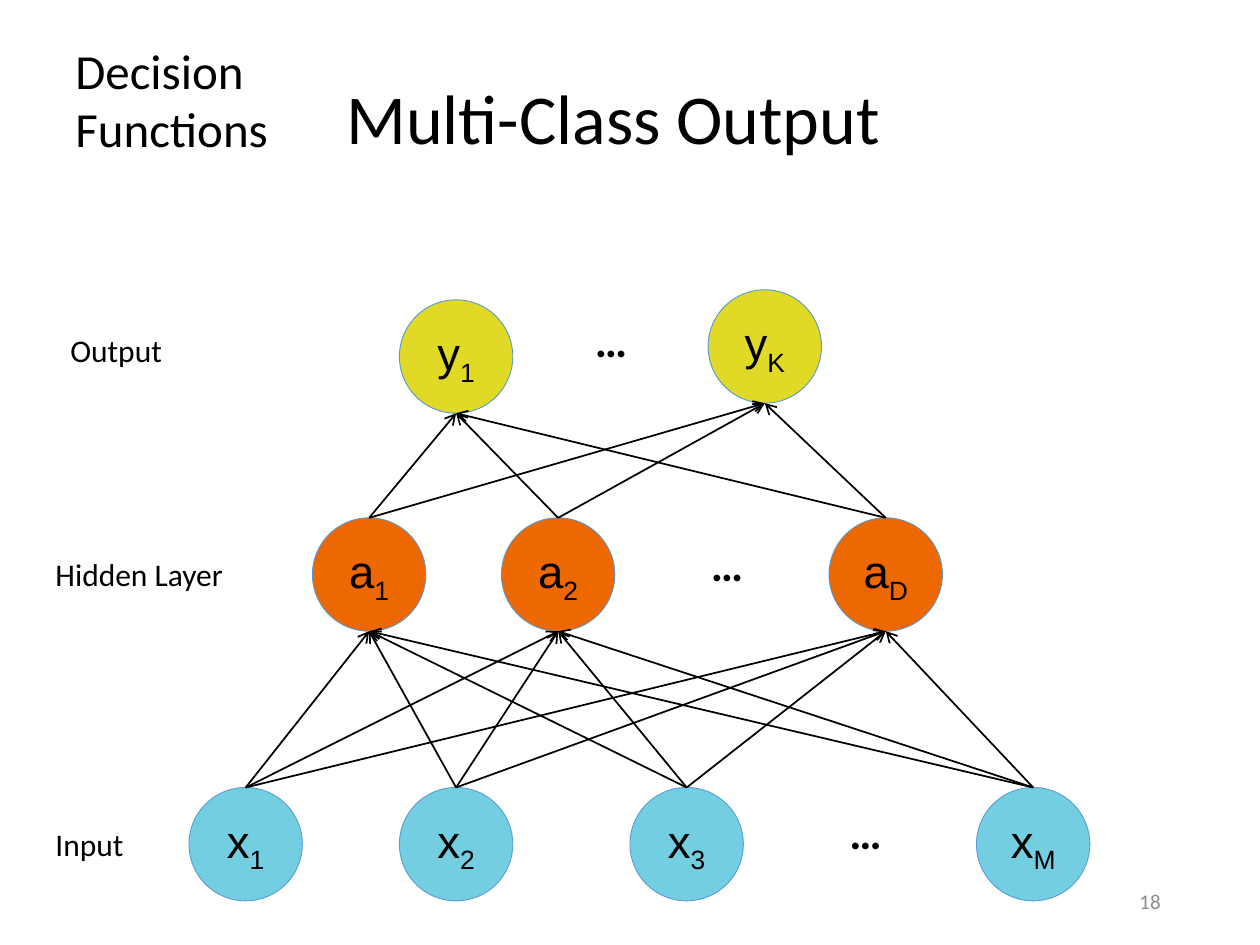
from itertools import product

from lxml.etree import SubElement
from pptx import Presentation
from pptx.dml.color import RGBColor
from pptx.enum.shapes import MSO_CONNECTOR, MSO_SHAPE
from pptx.enum.text import MSO_ANCHOR, PP_ALIGN
from pptx.oxml.ns import qn
from pptx.util import Inches, Pt

COLORS = {
    "text": "000000", "number": "8C8C8C",
    "input": "72CEE0", "hidden": "EE6802", "output": "E0D925",
    "input_edge": "5B9BD5", "hidden_edge": "5698D3", "output_edge": "5698D3",
}
DIAMETER = 0.9

# Each layer: letter, then (subscript, left, top) of every node
LAYERS = {
    "output": ("y", [("1", 3.17, 2.38), ("K", 5.62, 2.3)]),
    "hidden": ("a", [("1", 2.48, 4.11), ("2", 3.98, 4.11), ("D", 6.58, 4.11)]),
    "input": ("x", [("1", 1.5, 6.25), ("2", 3.17, 6.25),
                    ("3", 5, 6.25), ("M", 7.75, 6.25)]),
}
LAYER_LABELS = [
    ("Output", 0.46, 2.58, 1.42, PP_ALIGN.LEFT),
    ("Hidden Layer", -0.02, 4.36, 2.25, PP_ALIGN.CENTER),
    ("Input", 0, 6.5, 1.42, PP_ALIGN.CENTER),
]
GAPS = [(4.56, 2.42), (5.48, 4.2), (6.58, 6.33)]


def color(name):
    return RGBColor.from_string(COLORS[name])


def set_font(para, size, name="Calibri", tint="text", bold=False):
    para.font.name = name
    para.font.size = Pt(size)
    para.font.bold = bold
    para.font.color.rgb = color(tint)


def add_text(page, text, place, size, align=PP_ALIGN.LEFT,
             anchor=MSO_ANCHOR.MIDDLE, **font):
    box = page.shapes.add_textbox(*map(Inches, place))
    frame = box.text_frame
    frame.word_wrap = True
    frame.vertical_anchor = anchor
    para = frame.paragraphs[0]
    para.text = text
    para.alignment = align
    set_font(para, size, **font)


def format_title(page, text):
    title = page.shapes.title
    title.left, title.top, title.width, title.height = map(
        Inches, (2.65, 0.24, 8.62, 1.45))
    title.text_frame.vertical_anchor = MSO_ANCHOR.MIDDLE
    para = title.text_frame.paragraphs[0]
    para.text = text
    para.alignment = PP_ALIGN.LEFT
    para.line_spacing = 0.9
    set_font(para, 40)


def add_node(page, layer, letter, subscript, left, top):
    node = page.shapes.add_shape(
        MSO_SHAPE.FLOWCHART_CONNECTOR,
        *map(Inches, (left, top, DIAMETER, DIAMETER)))
    node.shadow.inherit = False
    node.fill.solid()
    node.fill.fore_color.rgb = color(layer)
    node.line.color.rgb = color(f"{layer}_edge")
    node.line.width = Pt(0.5)
    frame = node.text_frame
    frame.word_wrap = False
    frame.vertical_anchor = MSO_ANCHOR.MIDDLE
    para = frame.paragraphs[0]
    para.alignment = PP_ALIGN.CENTER
    set_font(para, 26, name="Arial")
    para.add_run().text = letter
    span = para.add_run()
    span.text = subscript
    span._r.get_or_add_rPr().set("baseline", "-25000")
    return node


def add_arrow(page, upper, lower):
    """Line from the bottom of the upper node, arrowhead there, to the lower one."""
    arrow = page.shapes.add_connector(
        MSO_CONNECTOR.STRAIGHT,
        upper.left + upper.width // 2, upper.top + upper.height,
        lower.left + lower.width // 2, lower.top)
    arrow.end_connect(lower, 0)
    arrow.line.color.rgb = color("text")
    arrow.line.width = Pt(1)
    SubElement(arrow.line._get_or_add_ln(), qn("a:headEnd"), type="arrow")
    SubElement(arrow._element.spPr, qn("a:effectLst"))


def main():
    deck = Presentation()
    deck.slide_width, deck.slide_height = Inches(10), Inches(7.5)
    page = deck.slides.add_slide(deck.slide_layouts[5])

    # Headings and page number
    format_title(page, "Multi-Class Output")
    add_text(page, "Decision Functions", (0.5, 0.16, 2.92, 1.25), 28)
    add_text(page, "18", (7.06, 6.95, 2.25, 0.4), 12, PP_ALIGN.RIGHT,
             tint="number")

    # Network nodes
    nodes = {
        layer: [add_node(page, layer, letter, *node) for node in places]
        for layer, (letter, places) in LAYERS.items()
    }

    # Every node feeds every node of the layer above
    for above, below in (("hidden", "input"), ("output", "hidden")):
        for upper, lower in product(nodes[above], nodes[below]):
            add_arrow(page, upper, lower)

    # Layer names and omitted nodes
    for text, left, top, width, align in LAYER_LABELS:
        add_text(page, text, (left, top, width, 0.4), 18, align, MSO_ANCHOR.TOP)
    for left, top in GAPS:
        add_text(page, "…", (left, top, 0.58, 0.54), 26, PP_ALIGN.CENTER,
                 bold=True)

    deck.save("out.pptx")


if __name__ == "__main__":
    main()
